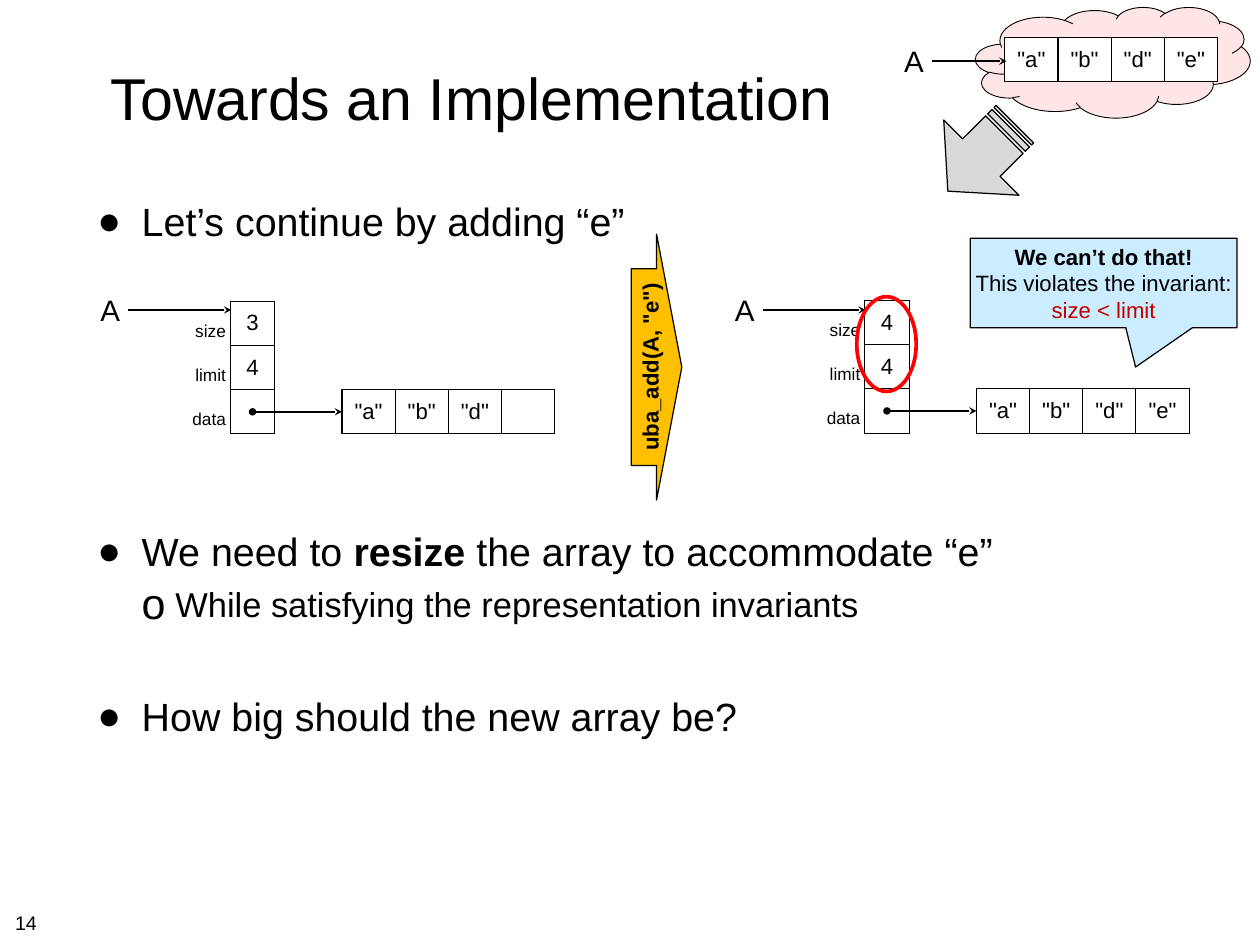
from lxml import etree
from pptx import Presentation
from pptx.dml.color import RGBColor
from pptx.enum.shapes import MSO_CONNECTOR, MSO_SHAPE
from pptx.enum.text import MSO_ANCHOR, PP_ALIGN
from pptx.oxml.ns import qn
from pptx.util import Pt

PX = 9144
FONT = "Arial"
LEFT, CENTER, RIGHT = PP_ALIGN.LEFT, PP_ALIGN.CENTER, PP_ALIGN.RIGHT
TOP, MIDDLE, BOTTOM = MSO_ANCHOR.TOP, MSO_ANCHOR.MIDDLE, MSO_ANCHOR.BOTTOM
STRAIGHT = MSO_CONNECTOR.STRAIGHT
CALLOUT = MSO_SHAPE.RECTANGULAR_CALLOUT
CLOUD, OVAL = MSO_SHAPE.CLOUD, MSO_SHAPE.OVAL
DOWN_ARROW, STRIPED_ARROW = MSO_SHAPE.DOWN_ARROW, MSO_SHAPE.STRIPED_RIGHT_ARROW

BLACK = RGBColor(0, 0, 0)
WHITE = RGBColor(0xFF, 0xFF, 0xFF)
RED = RGBColor(0xFF, 0, 0)
DARK_RED = RGBColor(0xC0, 0, 0)
PALE_BLUE = RGBColor(0xCC, 0xEC, 0xFF)
PALE_PINK = RGBColor(0xFF, 0xE5, 0xE5)
AMBER = RGBColor(0xFF, 0xC0, 0)
GREY = RGBColor(0xD9, 0xD9, 0xD9)

TITLE = "Towards an Implementation"
PAGE_NUMBER = "14"
# text runs (text, bold), bullet, bullet %, size, margin, hang, space before
POINTS = [
    ([("Let’s continue by adding “e”", False)], "●", 100, 32, 50, 50, 8),
    ([("We need to ", False), ("resize", True),
      (" the array to accommodate “e”", False)], "●", 100, 32, 50, 50, 230),
    ([("While satisfying the representation invariants", False)], "o", 125, 28, 88, 38, 7),
    ([("How big should the new array be?", False)], "●", 100, 32, 50, 50, 55),
]
WARNING = [
    ("We can’t do that!", True, BLACK),
    ("This violates the invariant:", False, BLACK),
    ("size < limit", False, DARK_RED),
]
CALL = 'uba_add(A, "e")'
FULL_ARRAY = ['"a"', '"b"', '"d"', '"e"']
AFTER = [("size", "4"), ("limit", "4"), ("data", "")]
BEFORE = [("size", "3"), ("limit", "4"), ("data", "")]
BEFORE_ARRAY = ['"a"', '"b"', '"d"', ""]

prs = Presentation()
prs.slide_width, prs.slide_height = 1422 * PX, 1067 * PX
slide = prs.slides.add_slide(prs.slide_layouts[6])


def box(*lengths):
    return [length * PX for length in lengths]


def set_margins(holder, margins):
    (holder.margin_left, holder.margin_top,
     holder.margin_right, holder.margin_bottom) = box(*margins)


def style(paragraph, size, align=LEFT, bold=False, color=BLACK):
    paragraph.alignment = align
    font = paragraph.font
    font.name, font.size, font.bold = FONT, Pt(size), bold
    font.color.rgb = color


def prepare(frame, margins, anchor, wrap):
    set_margins(frame, margins)
    frame.vertical_anchor = anchor
    frame.word_wrap = wrap
    return frame


def add_label(text, place, size, align=LEFT, anchor=TOP, margins=(6, 6, 6, 6), wrap=False):
    frame = prepare(slide.shapes.add_textbox(*box(*place)).text_frame, margins, anchor, wrap)
    frame.text = text
    style(frame.paragraphs[0], size, align)


def add_figure(kind, place, fill, line=BLACK, width=1, rotation=0, adjust=()):
    figure = slide.shapes.add_shape(kind, *box(*place))
    figure.shadow.inherit = False
    figure.rotation = rotation
    if fill is None:
        figure.fill.background()
    else:
        figure.fill.solid()
        figure.fill.fore_color.rgb = fill
    figure.line.color.rgb = line
    figure.line.width = Pt(width)
    for index, value in enumerate(adjust):
        figure.adjustments[index] = value
    return figure


def add_arrow(x1, y1, x2, y2, dot=False):
    arrow = slide.shapes.add_connector(STRAIGHT, *box(x1, y1, x2, y2))
    arrow.line.color.rgb = BLACK
    arrow.line.width = Pt(2)
    outline = arrow.line._get_or_add_ln()
    if dot:
        etree.SubElement(outline, qn("a:headEnd"), type="oval")
    etree.SubElement(outline, qn("a:tailEnd"), type="stealth")
    etree.SubElement(arrow._element.spPr, qn("a:effectLst"))


def set_borders(cell, black_sides):
    props = cell._tc.get_or_add_tcPr()
    for index, side in enumerate("LRTB"):
        border = etree.Element(qn("a:ln" + side), w=str(Pt(1)))
        if side in black_sides:
            fill = etree.SubElement(border, qn("a:solidFill"))
            etree.SubElement(fill, qn("a:srgbClr"), val=str(BLACK))
        else:
            etree.SubElement(border, qn("a:noFill"))
        props.insert(index, border)


def add_grid(rows, x, y, widths):
    table = slide.shapes.add_table(
        len(rows), len(widths), *box(x, y, sum(widths), 50 * len(rows))).table
    table.first_row = table.horz_banding = False
    for column, width in zip(table.columns, widths):
        column.width = width * PX
    return table


def fill_cell(cell, text, size, align, anchor, sides):
    cell.text = text
    cell.vertical_anchor = anchor
    style(cell.text_frame.paragraphs[0], size, align)
    set_borders(cell, sides)


def add_array(values, x, y):
    table = add_grid([values], x, y, [60] * len(values))
    for cell, value in zip(table.rows[0].cells, values):
        fill_cell(cell, value, 18, CENTER, MIDDLE, "LRTB")
        cell.fill.solid()
        cell.fill.fore_color.rgb = WHITE


def add_variable(x, y, reach):
    add_arrow(x + 42, y + 25, x + 42 + reach, y + 25)
    add_label("A", (x, y, 43, 50), 24, CENTER, margins=(10, 5, 10, 5))


def add_record(fields, values, x, y):
    table = add_grid(fields, x, y, [70, 50])
    for row, (field, value) in zip(table.rows, fields):
        name_cell, value_cell = row.cells
        fill_cell(name_cell, field, 14, RIGHT, BOTTOM, "R")
        set_margins(name_cell, (5, 5, 5, 5))
        fill_cell(value_cell, value, 18, CENTER, MIDDLE, "LRTB")
        for cell in row.cells:
            cell.fill.background()
    add_array(values, x + 196, y + 100)
    add_arrow(x + 95, y + 125, x + 196, y + 125, dot=True)
    add_variable(x - 87, 325, 116)


add_label(TITLE, (104, 28, 857, 164), 48, CENTER, MIDDLE, wrap=True)

points = prepare(slide.shapes.add_textbox(*box(104, 217, 1214, 754)).text_frame,
                 (6, 6, 6, 6), TOP, True)
for index, (runs, bullet, percent, size, margin, hang, gap) in enumerate(POINTS):
    point = points.add_paragraph() if index else points.paragraphs[0]
    style(point, size)
    point.space_before = Pt(gap)
    for text, bold in runs:
        run = point.add_run()
        run.text = text
        run.font.bold = bold
    props = point._p.get_or_add_pPr()
    props.set("marL", str(margin * PX))
    props.set("indent", str(-hang * PX))
    marks = [etree.Element(qn("a:buSzPct"), val=str(percent * 1000)),
             etree.Element(qn("a:buFont"), typeface=FONT),
             etree.Element(qn("a:buChar"), char=bullet)]
    for mark in marks:
        props.insert(len(props) - 1, mark)

callout = add_figure(CALLOUT, (1095, 269, 301, 101), PALE_BLUE, adjust=(0.12, 0.94))
warning = prepare(callout.text_frame, (5, 5, 5, 5), MIDDLE, False)
for index, (text, bold, color) in enumerate(WARNING):
    line = warning.add_paragraph() if index else warning.paragraphs[0]
    line.text = text
    style(line, 18, CENTER, bold, color)

add_figure(CLOUD, (1101, 8, 310, 125), PALE_PINK, width=0.75)
add_array(FULL_ARRAY, 1134, 42)
add_variable(1010, 44, 84)

add_record(AFTER, FULL_ARRAY, 906, 339)
add_figure(OVAL, (967, 335, 67, 107), None, RED, 3)

call_arrow = add_figure(DOWN_ARROW, (591, 386, 300, 57), AMBER, rotation=270, adjust=(0.74, 0.5))
call = prepare(call_arrow.text_frame, (6, 6, 6, 0), MIDDLE, True)
call.text = CALL
style(call.paragraphs[0], 18, CENTER, True)

add_figure(STRIPED_ARROW, (1054, 118, 107, 120), GREY, rotation=135)
add_label(PAGE_NUMBER, (11, 1023, 37, 35), 16)
add_record(BEFORE, BEFORE_ARRAY, 190, 340)

prs.save("out.pptx")
